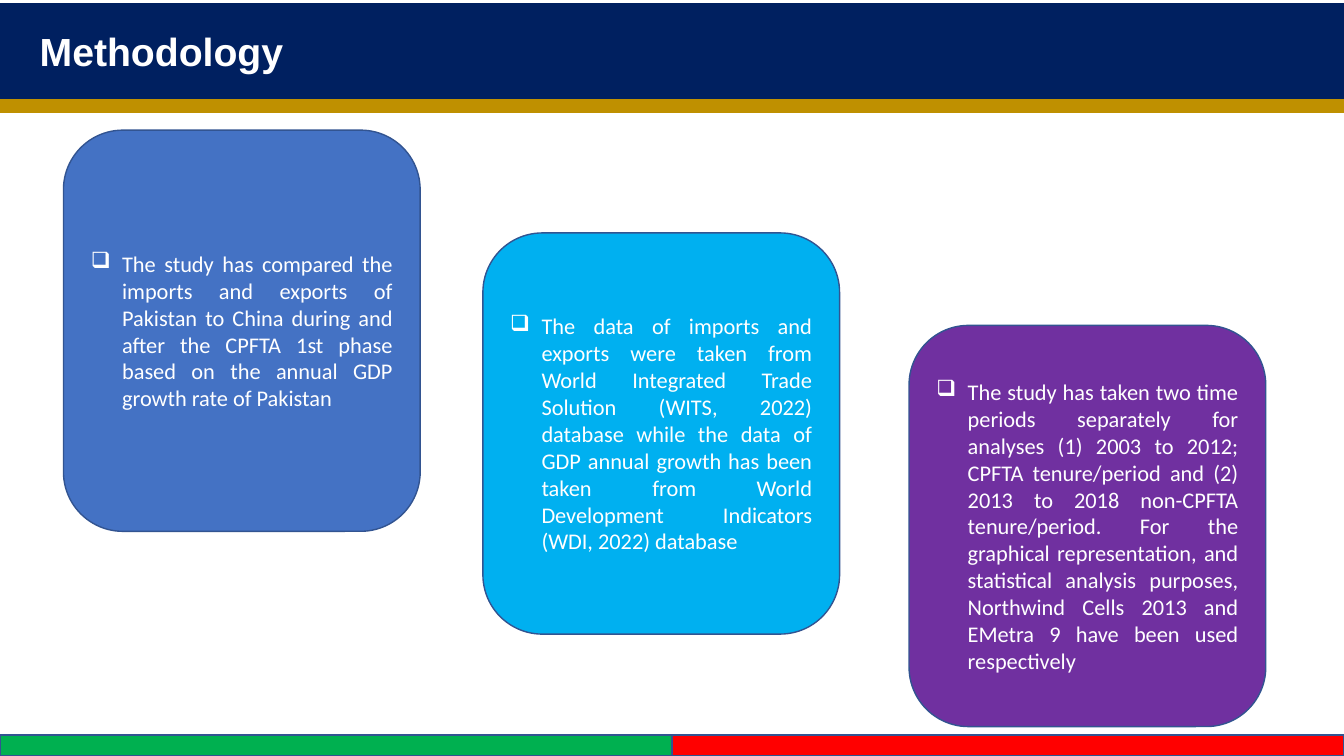
"""Build the Methodology slide with three stepped cards."""
from lxml import etree
from pptx import Presentation
from pptx.dml.color import RGBColor
from pptx.enum.shapes import MSO_CONNECTOR, MSO_SHAPE
from pptx.enum.text import MSO_ANCHOR, MSO_AUTO_SIZE, PP_ALIGN
from pptx.oxml.ns import qn
from pptx.util import Cm, Pt

RECTANGLE = MSO_SHAPE.RECTANGLE
ROUNDED = MSO_SHAPE.ROUNDED_RECTANGLE
STRAIGHT = MSO_CONNECTOR.STRAIGHT
MIDDLE = MSO_ANCHOR.MIDDLE
NO_AUTOFIT = MSO_AUTO_SIZE.NONE
LEFT = PP_ALIGN.LEFT
JUSTIFY = PP_ALIGN.JUSTIFY

TITLE_ONLY_LAYOUT = 5
SLIDE_WIDTH = 33.87
SLIDE_HEIGHT = 19.05
CARD_WIDTH = 8.99
CARD_HEIGHT = 10.11
BULLET_INDENT = 0.79
FOOTER_TOP = 18.52

COLORS = {
    "navy": "002060",
    "gold": "BF9000",
    "blue": "4472C4",
    "sky": "00B0F0",
    "purple": "7030A0",
    "green": "00B050",
    "red": "FF0000",
    "outline": "325491",
    "white": "FFFFFF",
}

CARDS = [
    (1.6, 3.28, "blue",
     "The study has compared the imports and exports of Pakistan to China during "
     "and after the CPFTA 1st phase based on the annual GDP growth rate of Pakistan"),
    (12.17, 5.87, "sky",
     "The data of imports and exports were taken from World Integrated Trade "
     "Solution (WITS, 2022) database while the data of GDP annual growth has been "
     "taken from World Development Indicators (WDI, 2022) database"),
    (22.91, 8.2, "purple",
     "The study has taken two time periods separately for analyses (1) 2003 to "
     "2012; CPFTA tenure/period and (2) 2013 to 2018 non-CPFTA tenure/period. For "
     "the graphical representation, and statistical analysis purposes, "
     "Northwind Cells 2013 and EMetra 9 have been used respectively"),
]


def color(name):
    """Return the named colour."""
    return RGBColor.from_string(COLORS[name])


def write_text(box, text, font_name, size, alignment, bold=False):
    """Write one white, vertically centred paragraph and return it."""
    frame = box.text_frame
    frame.text = text
    frame.word_wrap = True
    frame.auto_size = NO_AUTOFIT
    frame.vertical_anchor = MIDDLE
    para = frame.paragraphs[0]
    para.alignment = alignment
    font = para.runs[0].font
    font.name = font_name
    font.size = Pt(size)
    font.bold = bold
    font.color.rgb = color("white")
    return para


def add_bullet(para, mark):
    """Give the paragraph a hanging bullet."""
    properties = para._p.get_or_add_pPr()
    properties.set("marL", str(Cm(BULLET_INDENT)))
    properties.set("indent", str(-Cm(BULLET_INDENT)))
    etree.SubElement(properties, qn("a:buChar")).set("char", mark)


def add_title(page, text):
    """Turn the title placeholder into the navy header band."""
    title = page.shapes.title
    title.left, title.top = Cm(0), Cm(0.08)
    title.width, title.height = Cm(SLIDE_WIDTH), Cm(2.41)
    title.fill.solid()
    title.fill.fore_color.rgb = color("navy")
    write_text(title, text, "Arial", 28, LEFT, bold=True)
    title.text_frame.margin_left = Cm(1)


def add_rule(page, top):
    """Draw the gold rule under the header."""
    rule = page.shapes.add_connector(STRAIGHT, Cm(0), Cm(top), Cm(SLIDE_WIDTH), Cm(top))
    rule.line.color.rgb = color("gold")
    rule.line.width = Pt(10)
    etree.SubElement(rule._element.spPr, qn("a:effectLst"))


def add_block(page, kind, left, top, width, height, fill):
    """Add a filled, outlined shape without shadow."""
    block = page.shapes.add_shape(kind, Cm(left), Cm(top), Cm(width), Cm(height))
    block.shadow.inherit = False
    block.fill.solid()
    block.fill.fore_color.rgb = color(fill)
    block.line.color.rgb = color("outline")
    block.line.width = Pt(1)
    return block


def add_card(page, left, top, fill, text):
    """Add a rounded card with one bulleted paragraph."""
    card = add_block(page, ROUNDED, left, top, CARD_WIDTH, CARD_HEIGHT, fill)
    para = write_text(card, text, "Calibri", 16, JUSTIFY)
    add_bullet(para, "❑")


def add_footer(page):
    """Add the two-coloured strip along the bottom edge."""
    half = SLIDE_WIDTH / 2
    for index, fill in enumerate(("green", "red")):
        add_block(page, RECTANGLE, index * half, FOOTER_TOP, half,
                  SLIDE_HEIGHT - FOOTER_TOP, fill)


def main():
    """Build and save the deck."""
    deck = Presentation()
    deck.slide_width, deck.slide_height = Cm(SLIDE_WIDTH), Cm(SLIDE_HEIGHT)
    page = deck.slides.add_slide(deck.slide_layouts[TITLE_ONLY_LAYOUT])
    add_title(page, "Methodology")
    add_rule(page, 2.67)
    for card in CARDS:
        add_card(page, *card)
    add_footer(page)
    deck.save("out.pptx")


if __name__ == "__main__":
    main()
